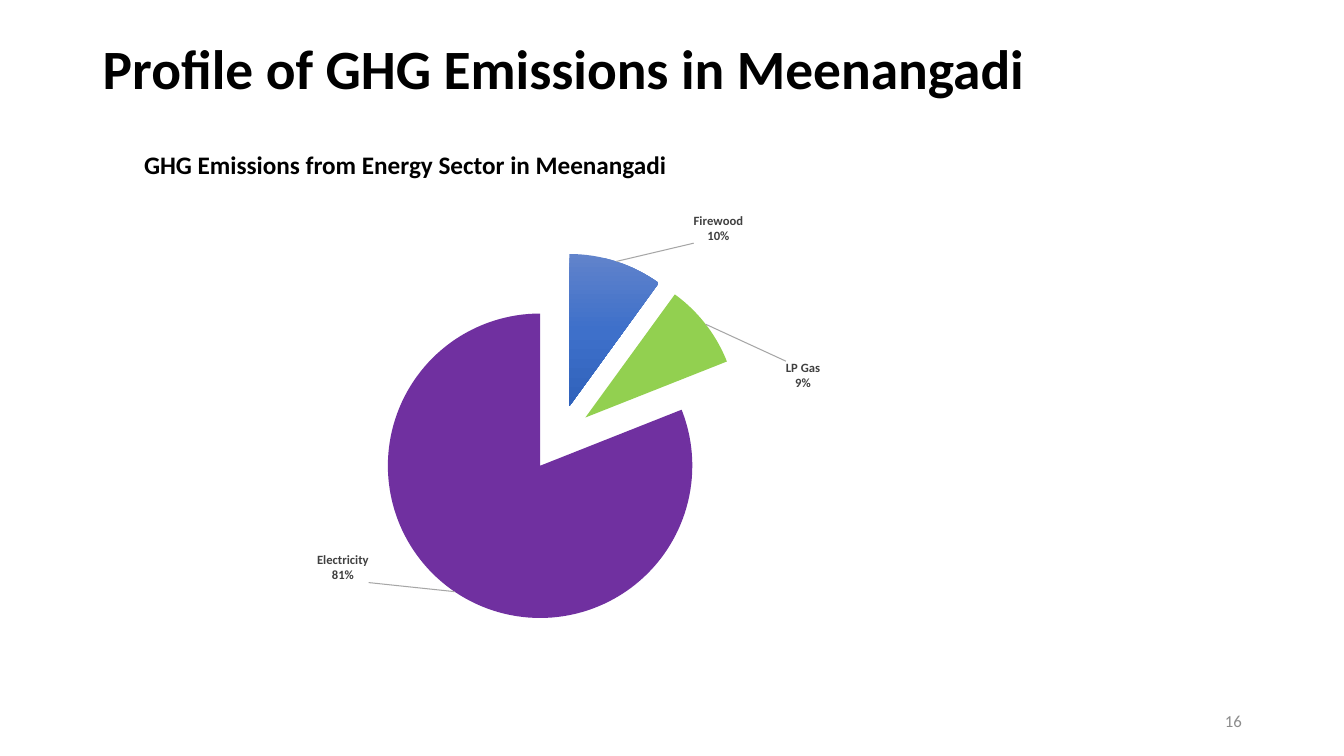
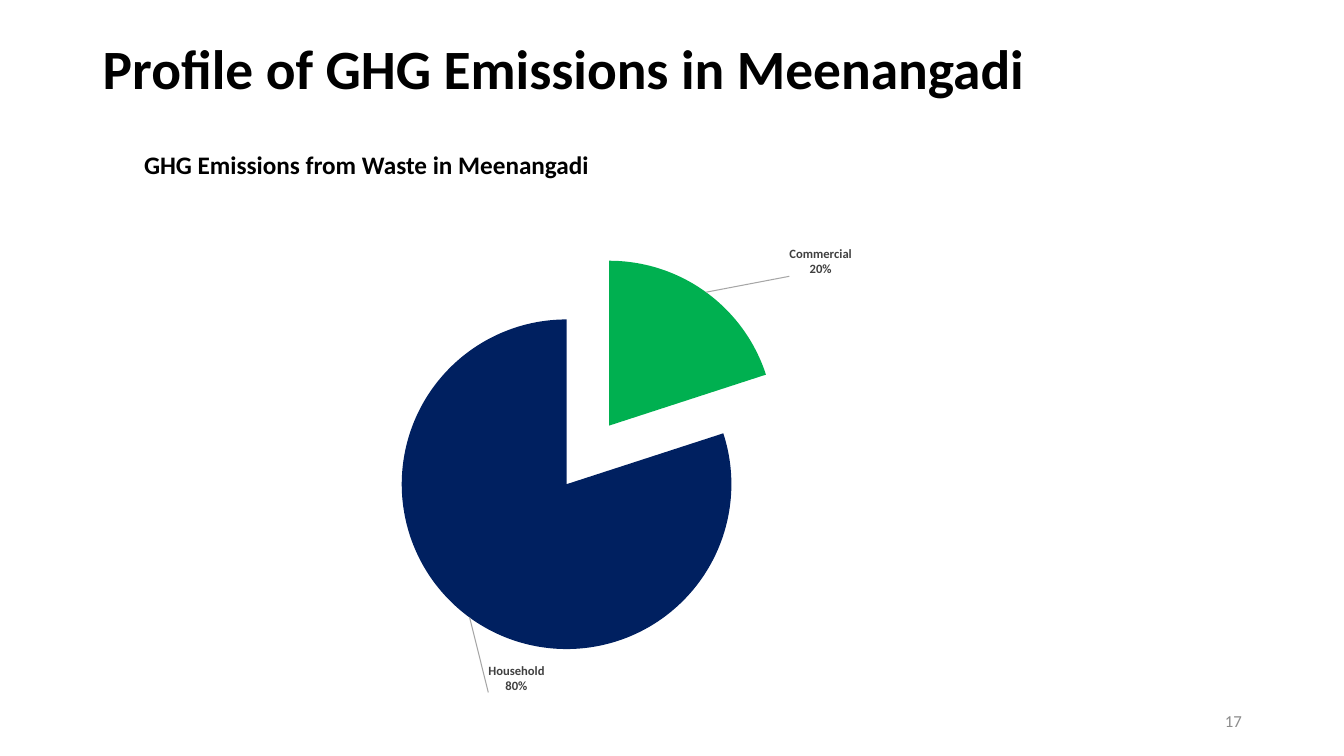
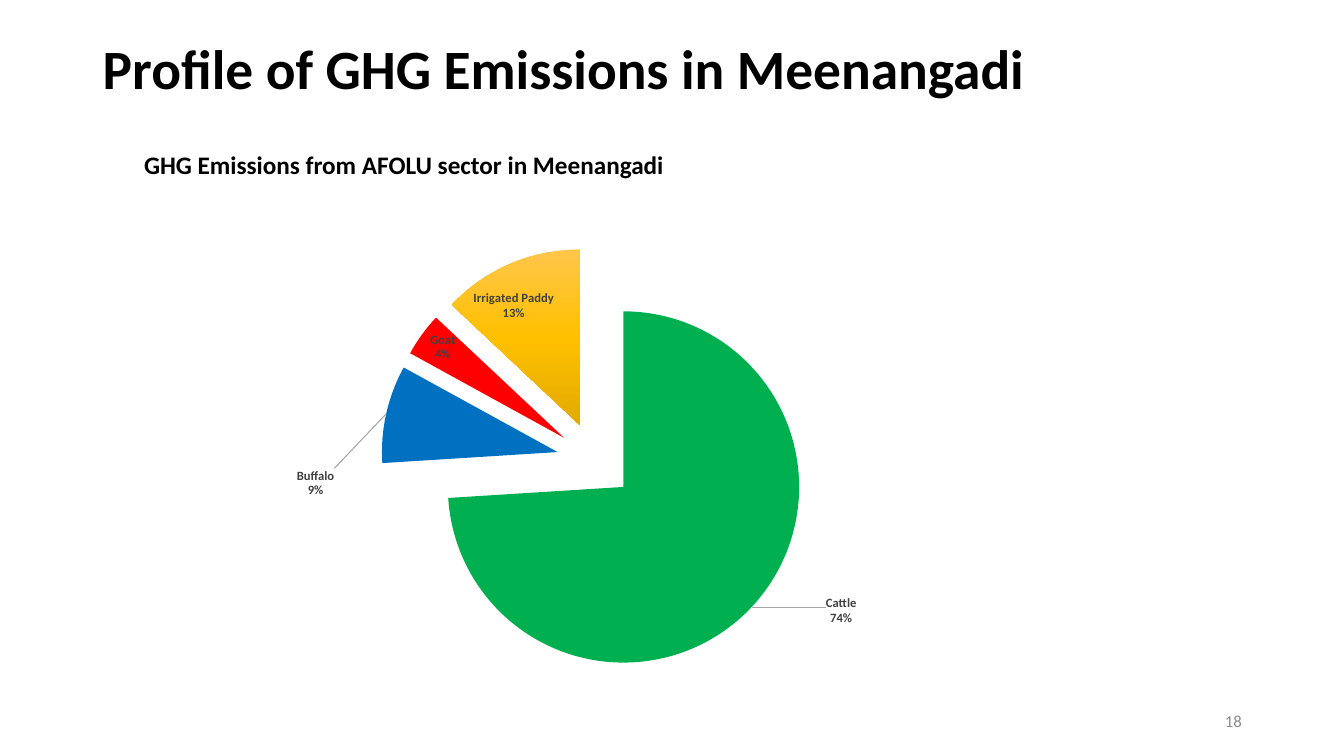
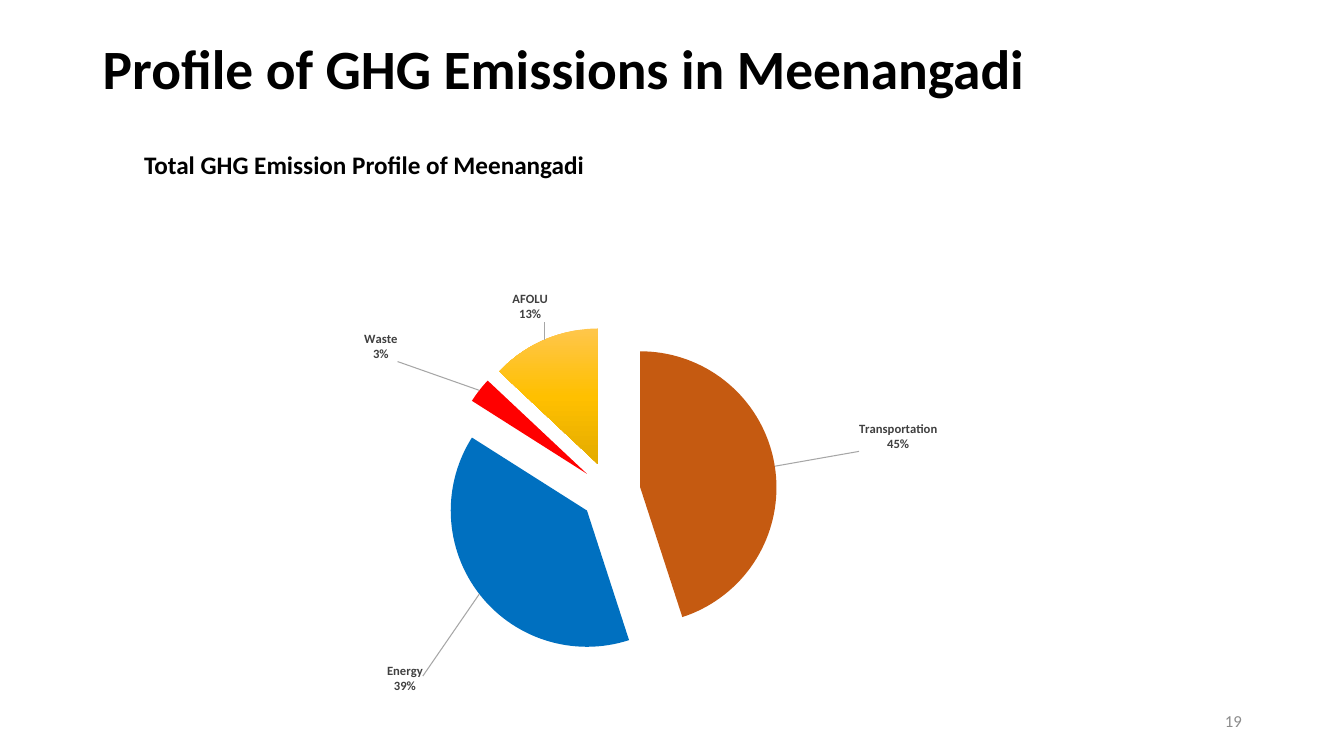
"""Build four slides of exploded pie charts on greenhouse gas emissions."""
from copy import deepcopy

from pptx import Presentation
from pptx.chart.data import CategoryChartData
from pptx.dml.color import RGBColor
from pptx.enum.chart import XL_CHART_TYPE, XL_LABEL_POSITION
from pptx.enum.text import MSO_ANCHOR, MSO_AUTO_SIZE, PP_ALIGN
from pptx.oxml import parse_xml
from pptx.oxml.ns import nsdecls
from pptx.util import Pt

PIE = XL_CHART_TYPE.PIE
BEST_FIT = XL_LABEL_POSITION.BEST_FIT
TOP, MIDDLE = MSO_ANCHOR.TOP, MSO_ANCHOR.MIDDLE
NO_AUTOFIT = MSO_AUTO_SIZE.NONE
LEFT, RIGHT = PP_ALIGN.LEFT, PP_ALIGN.RIGHT

FONT = "Calibri"
TITLE = "Profile of GHG Emissions in Meenangadi"
FIRST_NUMBER = 16
EXPLOSION = 22
BLUE_FADE = ("6183CB", "3E70CA", "3062BB")
GOLD_FADE = ("FFC64B", "FFC000", "E3AB00")

PIES = [
    {
        "heading": "GHG Emissions from Energy Sector in Meenangadi",
        "box": (119.5, 148.3, 565.2, 319.7),
        "plot": (0.26, 0.1, 0.47, 0.83),
        "slices": [
            ("Firewood", 0.1, BLUE_FADE, (54, -9)),
            ("LP Gas", 0.09, "92D050", (54, 50)),
            ("Electricity", 0.81, "7030A0", (-59, -31)),
        ],
    },
    {
        "heading": "GHG Emissions from Waste in Meenangadi",
        "box": (123.8, 161.3, 598.3, 334.1),
        "plot": (0.25, 0.06, 0.49, 0.86),
        "slices": [
            ("Commercial", 0.2, "00B050", (57, -8)),
            ("Household", 0.8, "002060", (56, 50)),
        ],
    },
    {
        "heading": "GHG Emissions from AFOLU sector in Meenangadi",
        "box": (143.3, 148.3, 537.1, 344.2),
        "plot": (0.24, 0.08, 0.57, 0.89),
        "slices": [
            ("Cattle", 0.74, "00B050", (50, -11)),
            ("Buffalo", 0.09, "0070C0", (-33, 61)),
            ("Goat", 0.04, "FF0000", None),
            ("Irrigated Paddy", 0.13, GOLD_FADE, None),
        ],
    },
    {
        "heading": "Total GHG Emission Profile of Meenangadi",
        "box": (141.1, 182.9, 596.2, 312.5),
        "plot": (0.09, 0.16, 0.81, 0.76),
        "slices": [
            ("Transportation", 0.45, "C55A11", (56, -10)),
            ("Energy", 0.39, "0070C0", (-37, 56)),
            ("Waste", 0.03, "FF0000", (-55, -18)),
            ("AFOLU", 0.13, GOLD_FADE, (4, -9)),
        ],
    },
]


def color(value):
    """Turn a hex string into a colour."""
    return RGBColor.from_string(value)


def set_values(target, values):
    """Set every attribute named in a dict."""
    for name, value in values.items():
        setattr(target, name, value)


def chart_xml(tag, content="", attributes=""):
    """Make one chart element."""
    return parse_xml(f"<c:{tag} {nsdecls('c', 'a')} {attributes}>{content}</c:{tag}>")


def layout_xml(**values):
    """Make a manual layout from named values."""
    content = "".join(f'<c:{name} val="{value}"/>' for name, value in values.items())
    return chart_xml("layout", f"<c:manualLayout>{content}</c:manualLayout>")


class Deck:
    """Holds the shared style and the slide being built."""

    def __init__(self):
        """Start an empty wide presentation."""
        self.presentation = Presentation()
        set_values(self.presentation, {"slide_width": Pt(960), "slide_height": Pt(540)})
        self.slide = None

    def style_font(self, font, size, fill="000000", bold=False):
        """Format a font."""
        set_values(font, {"name": FONT, "size": Pt(size), "bold": bold})
        font.color.rgb = color(fill)

    def set_text(self, shape, text, size, fill="000000", bold=False,
                 align=LEFT, anchor=TOP, spacing=1.0):
        """Put one formatted paragraph into a shape."""
        frame = shape.text_frame
        set_values(frame, {"text": text, "word_wrap": True, "auto_size": NO_AUTOFIT,
                           "vertical_anchor": anchor})
        paragraph = frame.paragraphs[0]
        set_values(paragraph, {"alignment": align, "line_spacing": spacing})
        self.style_font(paragraph.runs[0].font, size, fill, bold)

    def add_slide(self, title):
        """Add a slide with its title."""
        layout = self.presentation.slide_layouts[5]
        self.slide = self.presentation.slides.add_slide(layout)
        shape = self.slide.shapes.title
        set_values(shape, {"left": Pt(66.2), "top": Pt(28.8),
                           "width": Pt(771), "height": Pt(44.6)})
        self.set_text(shape, title, 39.6, bold=True, anchor=MIDDLE, spacing=0.9)

    def add_text(self, box, text, size, **style):
        """Add a text box."""
        shape = self.slide.shapes.add_textbox(*map(Pt, box))
        self.set_text(shape, text, size, **style)

    def add_pie(self, box, plot, slices):
        """Add an exploded pie chart."""
        data = CategoryChartData(number_format="0%")
        data.categories = [category for category, *_ in slices]
        data.add_series("Series 1", [value for _, value, *_ in slices])
        chart = self.slide.shapes.add_chart(PIE, *map(Pt, box), data).chart
        set_values(chart, {"has_title": False, "has_legend": False})
        self.style_font(chart.font, 10)
        chart.plots[0].vary_by_categories = False

        area = chart.element.xpath(".//c:plotArea")[0]
        for layout in area.xpath("./c:layout"):
            area.remove(layout)
        x, y, width, height = plot
        area.insert(0, layout_xml(layoutTarget="inner", xMode="edge", yMode="edge",
                                  x=x, y=y, w=width, h=height))

        series = chart.plots[0].series[0]
        element = area.xpath(".//c:ser")[0]
        element.xpath("./c:tx")[0].addnext(chart_xml("explosion", "", f'val="{EXPLOSION}"'))
        for index, (_, _, fill, _) in enumerate(slices):
            self.fill_slice(element, series.points[index], fill)
        self.label_slices(series, element, box, [offset for *_, offset in slices])

    def fill_slice(self, element, point, fill):
        """Fill one slice with a colour or a three-step fade."""
        point.format.line.fill.background()
        if isinstance(fill, str):
            point.format.fill.solid()
            point.format.fill.fore_color.rgb = color(fill)
            return
        stops = "".join(
            f'<a:gs pos="{step * 50000}"><a:srgbClr val="{value}"/></a:gs>'
            for step, value in enumerate(fill))
        properties = element.xpath("./c:dPt/c:spPr")[-1]
        properties.insert(0, parse_xml(
            f"<a:gradFill {nsdecls('a')}><a:gsLst>{stops}</a:gsLst>"
            '<a:lin ang="5400000" scaled="0"/></a:gradFill>'))

    def label_slices(self, series, element, box, offsets):
        """Label the slices, moving labels that have an offset."""
        labels = series.data_labels
        set_values(labels, {"show_value": True, "show_category_name": True,
                            "show_percentage": False, "number_format": "0%",
                            "number_format_is_linked": False, "position": BEST_FIT})
        self.style_font(labels.font, 9, "404040", True)
        group = element.xpath("./c:dLbls")[0]
        for leader in group.xpath("./c:showLeaderLines"):
            group.remove(leader)
        group.append(chart_xml("separator", "\n"))
        shared = list(group)

        position = 0
        for index, offset in enumerate(offsets):
            if offset is None:
                continue
            label = chart_xml("dLbl", f'<c:idx val="{index}"/>')
            label.append(layout_xml(x=round(offset[0] / box[2], 4),
                                    y=round(offset[1] / box[3], 4)))
            label.extend(deepcopy(shared))
            group.insert(position, label)
            position += 1
        group.append(chart_xml("showLeaderLines", "", 'val="1"'))
        group.append(chart_xml(
            "leaderLines",
            '<c:spPr><a:ln w="9525"><a:solidFill><a:srgbClr val="A6A6A6"/>'
            "</a:solidFill></a:ln></c:spPr>"))


def main():
    """Build and save the slides."""
    deck = Deck()
    for number, pie in enumerate(PIES, FIRST_NUMBER):
        deck.add_slide(TITLE)
        deck.add_text((95.8, 103, 825, 28.8), pie["heading"], 18, bold=True)
        deck.add_pie(pie["box"], pie["plot"], pie["slices"])
        deck.add_text((678.2, 500.4, 216, 28.8), str(number), 12, fill="8C8C8C",
                      align=RIGHT, anchor=MIDDLE)
    deck.presentation.save("out.pptx")


if __name__ == "__main__":
    main()
